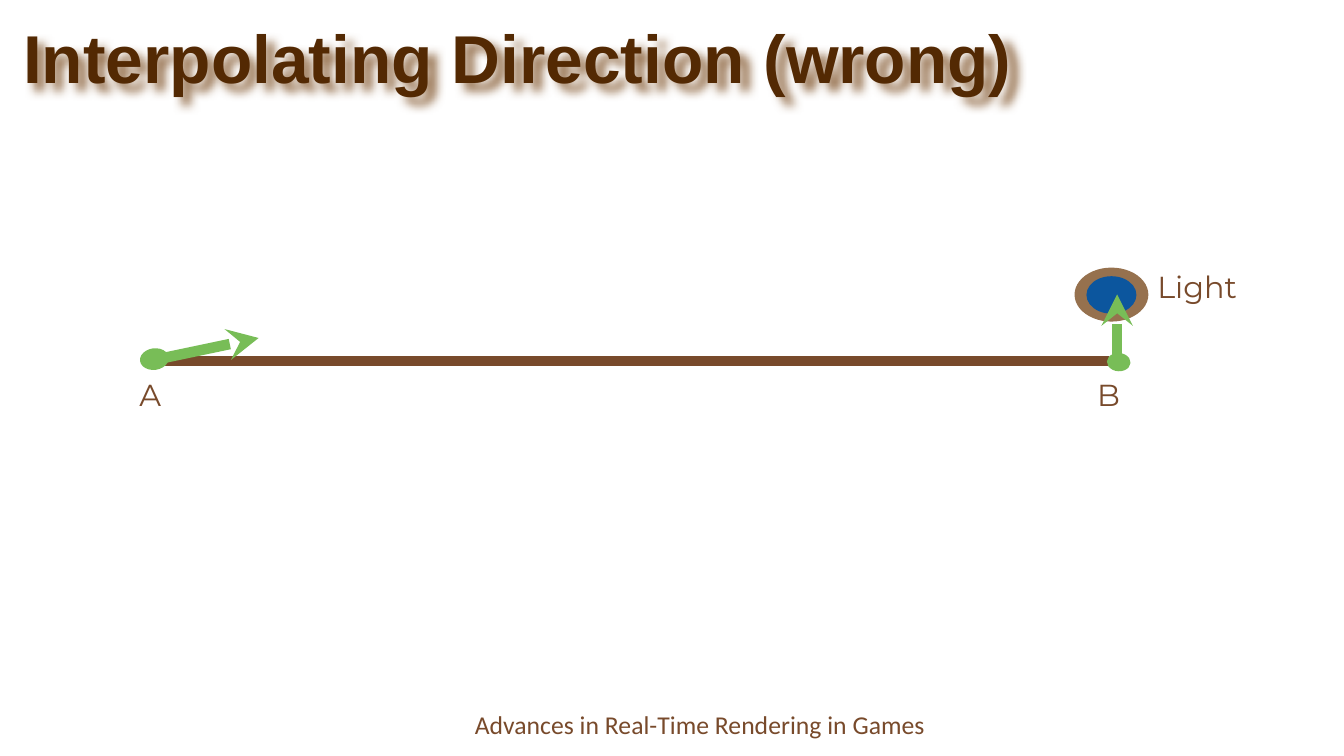
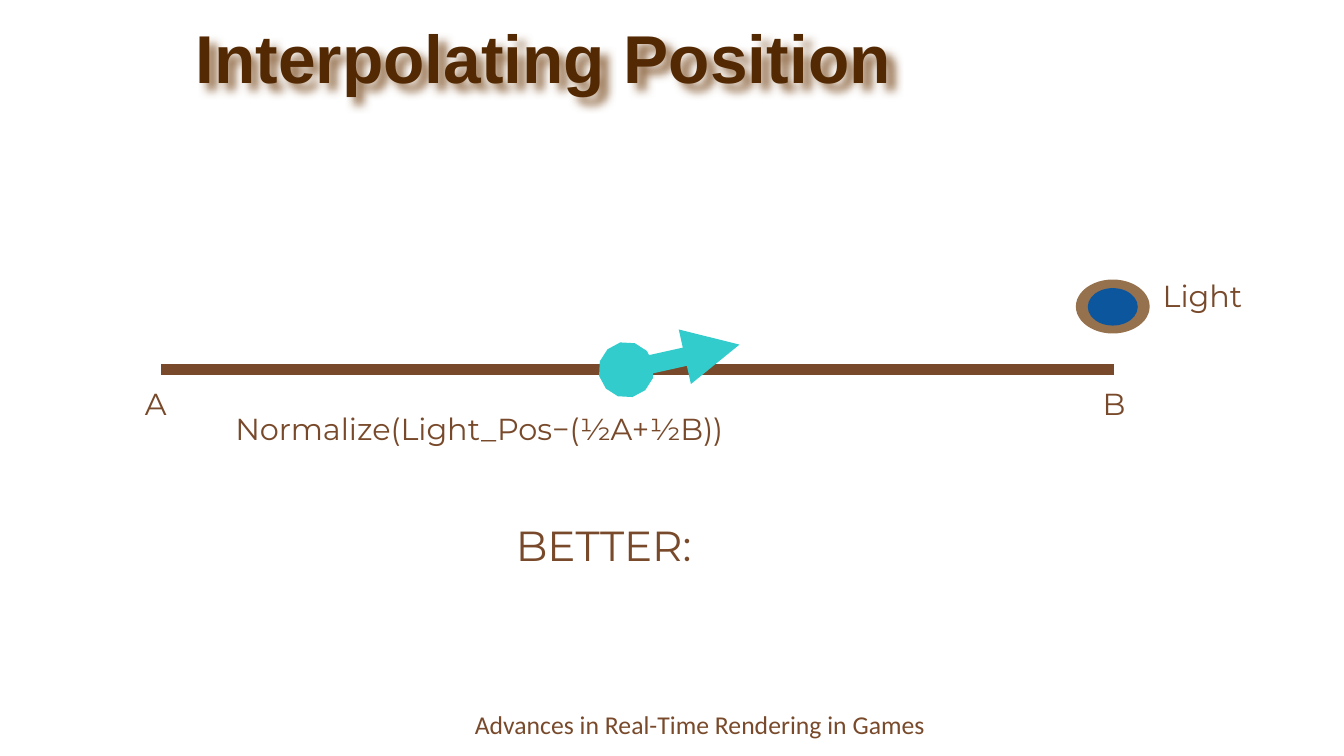
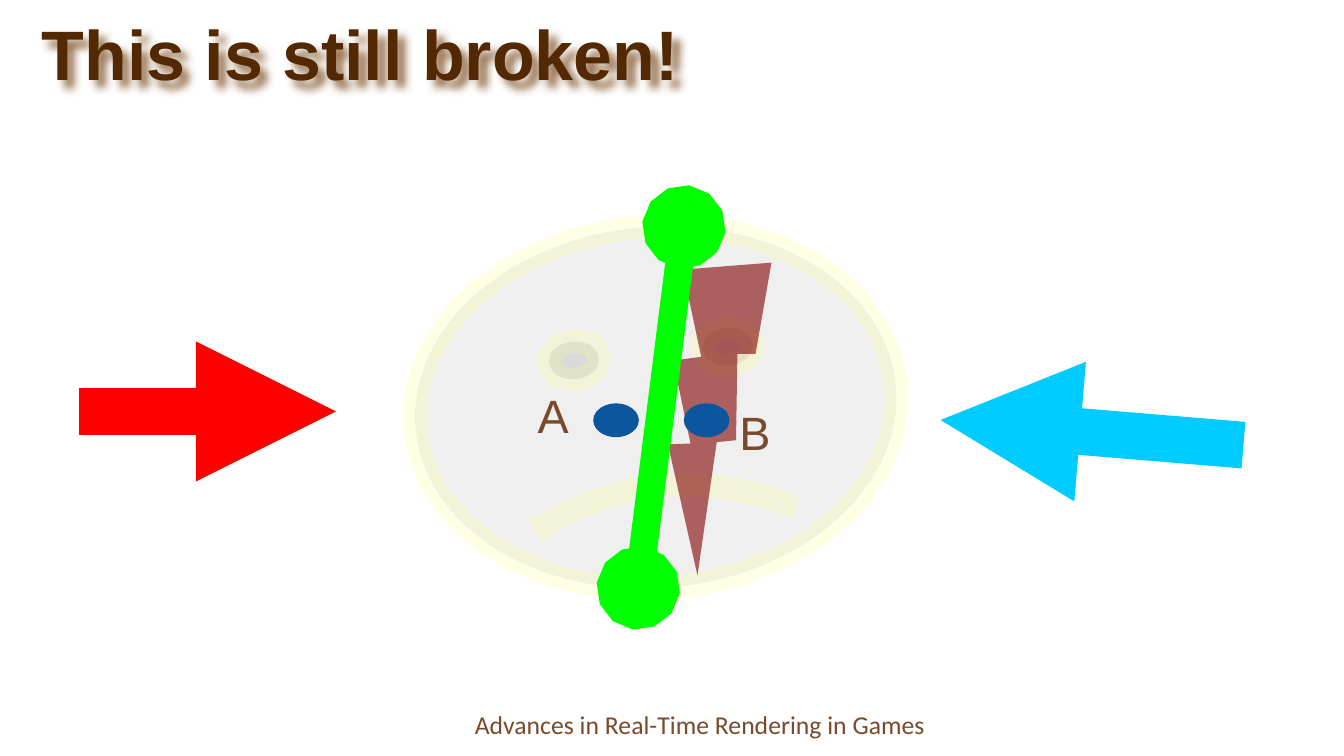
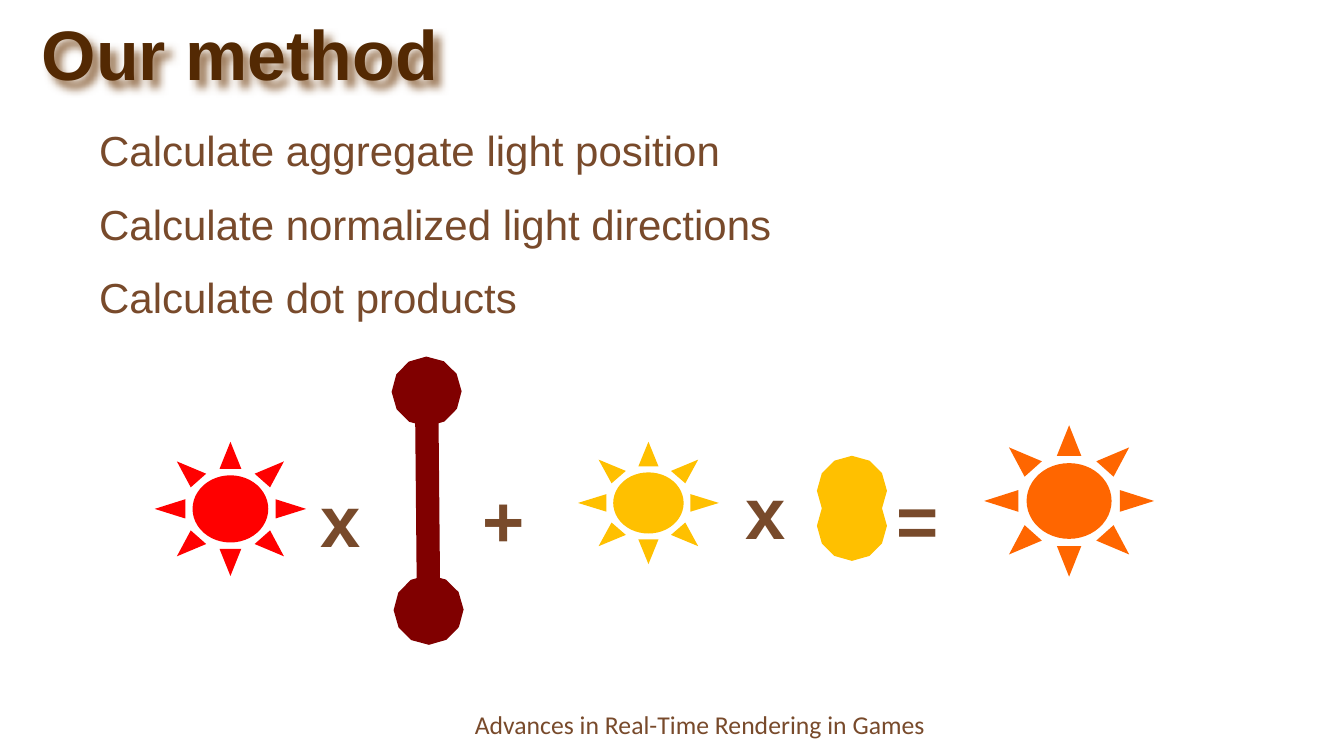
from dataclasses import dataclass
from typing import Optional

from lxml import etree
from pptx import Presentation
from pptx import util as u
from pptx.dml.color import RGBColor
from pptx.enum import shapes, text
from pptx.oxml import ns

COLORS = {
    "title": "532903", "brown": "784A2B", "shadow": "96714E",
    "direction": "78BD57", "rim": "96714E", "blue": "0C569E",
    "teal": "33CCCC", "gray": "C0C0C0", "pale": "FFFF99", "red": "FF0000",
    "cyan": "00CCFF", "maroon": "800000", "green": "00FF00",
    "amber": "FFC000", "orange": "FF6600",
}
FOOTER = "Advances in Real-Time Rendering in Games"
MSO = shapes.MSO_SHAPE
CENTER = text.PP_ALIGN.CENTER
LEFT = text.PP_ALIGN.LEFT
TIGHT = (0.18, 0.1)


@dataclass
class Box:
    left: float
    top: float
    width: float
    height: float

    def cm(self) -> tuple:
        return tuple(u.Cm(v) for v in (self.left, self.top, self.width, self.height))


@dataclass
class Figure:
    preset: shapes.MSO_SHAPE
    box: Box
    fill: str
    fill_alpha: int = 100
    line: Optional[str] = None
    line_width: float = 0.75
    line_alpha: int = 100
    rotation: float = 0
    adjust: Optional[float] = None


@dataclass
class Line:
    start: tuple
    end: tuple
    color: str
    width: float
    head: str = ""
    tail: str = ""


def rgb(name: str) -> RGBColor:
    return RGBColor.from_string(COLORS[name])


def set_alpha(fill, percent: int) -> None:
    if percent < 100:
        clr = fill._xPr.find(ns.qn("a:solidFill"))[0]
        etree.SubElement(clr, ns.qn("a:alpha"), val=str(percent * 1000))


def write(sp, content: str, *, size: float, font: str = "Arial", color: str = "brown",
          bold: bool = False, align=LEFT, anchor=text.MSO_ANCHOR.TOP, wrap: bool = True,
          inset: tuple = (0.25, 0.13), spacing: Optional[float] = None, gap: float = 0) -> None:
    tf = sp.text_frame
    tf.auto_size = text.MSO_AUTO_SIZE.NONE
    tf.word_wrap = wrap
    tf.vertical_anchor = anchor
    tf.margin_left = tf.margin_right = u.Cm(inset[0])
    tf.margin_top = tf.margin_bottom = u.Cm(inset[1])
    for i, line in enumerate(content.split("\n")):
        p = tf.add_paragraph() if i else tf.paragraphs[0]
        p.alignment = align
        p.line_spacing = spacing
        p.space_before = u.Pt(gap if i else 0)
        r = p.add_run()
        r.text = line
        r.font.size = u.Pt(size)
        r.font.name = font
        r.font.bold = bold
        r.font.color.rgb = rgb(color)


def add_text(s, content: str, box: Box, **fmt) -> None:
    write(s.shapes.add_textbox(*box.cm()), content, **fmt)


def add_figure(s, f: Figure) -> None:
    sp = s.shapes.add_shape(f.preset, *f.box.cm())
    sp.shadow.inherit = False
    sp.rotation = f.rotation
    if f.adjust is not None:
        sp.adjustments[0] = f.adjust
    sp.fill.solid()
    sp.fill.fore_color.rgb = rgb(f.fill)
    set_alpha(sp.fill, f.fill_alpha)
    if f.line:
        sp.line.color.rgb = rgb(f.line)
        sp.line.width = u.Pt(f.line_width)
        set_alpha(sp.line.fill, f.line_alpha)
    else:
        sp.line.fill.background()


def add_line(s, spec: Line) -> None:
    ends = [u.Cm(v) for v in spec.start + spec.end]
    sp = s.shapes.add_connector(shapes.MSO_CONNECTOR.STRAIGHT, *ends)
    sp.line.color.rgb = rgb(spec.color)
    sp.line.width = u.Pt(spec.width)
    ln = sp.line._get_or_add_ln()
    for tag, kind in (("a:headEnd", spec.head), ("a:tailEnd", spec.tail)):
        if kind:
            etree.SubElement(ln, ns.qn(tag), type=kind)
    etree.SubElement(sp._element.spPr, ns.qn("a:effectLst"))


def add_slide(prs, title: str, box: Box, size: float, align=LEFT):
    s = prs.slides.add_slide(prs.slide_layouts[5])
    add_text(s, FOOTER, Box(3.18, 10.59, 14.81, 0.74), size=11, font="Calibri", align=CENTER)
    sp = s.shapes.title
    sp.left, sp.top, sp.width, sp.height = box.cm()
    write(sp, title, size=size, color="title", bold=True, align=align,
          anchor=text.MSO_ANCHOR.MIDDLE, inset=(0.2, 0.1))
    effects = etree.SubElement(sp._element.spPr, ns.qn("a:effectLst"))
    shadow = etree.SubElement(effects, ns.qn("a:outerShdw"), blurRad="50800",
                              dist="50800", dir="2700000", algn="tl")
    etree.SubElement(shadow, ns.qn("a:srgbClr"), val=COLORS["shadow"])
    return s


def add_label(s, content: str, box: Box, size: float = 13, wrap: bool = False) -> None:
    add_text(s, content, box, size=size, font="Montserrat", wrap=wrap, inset=TIGHT)


def add_light(s, left: float, top: float, label: Box) -> None:
    for color, box in (("rim", Box(left, top, 1.09, 0.79)),
                       ("blue", Box(left + 0.18, top + 0.13, 0.73, 0.54))):
        add_figure(s, Figure(MSO.OVAL, box, color, line=color))
    add_label(s, "Light", label, wrap=True)


def add_segment(s, left: float, top: float) -> None:
    add_line(s, Line((left, top), (left + 14.4, top), "brown", 4.5))
    for name, x in (("A", left - 0.43), ("B", left + 14.05)):
        add_label(s, name, Box(x, top + 0.13, 0.74, 0.74))


def add_direction(s, dot: Box, rotation: float, start: tuple, end: tuple) -> None:
    add_figure(s, Figure(MSO.OVAL, dot, "direction", line="direction", rotation=rotation))
    add_line(s, Line(start, end, "direction", 4.5, tail="stealth"))


def interpolating_direction(prs) -> None:
    s = add_slide(prs, "Interpolating Direction (wrong)", Box(0, 0, 15.67, 1.7), 29, CENTER)
    add_segment(s, 2.36, 5.46)
    add_light(s, 16.26, 4.06, Box(17.32, 3.96, 2.34, 0.74))
    add_direction(s, Box(2.13, 5.28, 0.41, 0.3), 352.4, (2.34, 5.44), (3.91, 5.11))
    add_direction(s, Box(16.79, 5.31, 0.25, 0.33), 273.7, (16.89, 5.46), (16.89, 4.45))


def interpolating_position(prs) -> None:
    s = add_slide(prs, "Interpolating Position", Box(1.02, 0, 14.4, 1.7), 29, CENTER)
    add_segment(s, 2.44, 5.59)
    add_light(s, 16.28, 4.24, Box(17.4, 4.09, 2.59, 0.74))
    add_label(s, "Normalize(Light_Pos−(½A+½B))", Box(3.38, 6.1, 11.84, 0.74), wrap=True)
    add_label(s, "BETTER:", Box(7.62, 7.75, 3.43, 0.97), size=18)
    add_line(s, Line((9.47, 5.59), (11.18, 5.21), "teal", 8, "oval", "triangle"))


def still_broken(prs) -> None:
    s = add_slide(prs, "This is still broken!", Box(0.43, 0, 18.67, 1.6), 30)
    add_figure(s, Figure(MSO.SMILEY_FACE, Box(6.27, 3.43, 7.29, 5.46), "gray", 25,
                         "pale", 10, 25, 354.9, -0.05))
    add_line(s, Line((1.19, 6.22), (5.08, 6.22), "red", 20, tail="triangle"))
    add_line(s, Line((18.8, 6.73), (14.22, 6.35), "cyan", 20, tail="triangle"))
    add_figure(s, Figure(MSO.LIGHTNING_BOLT, Box(9.3, 3.76, 2.72, 4.57), "maroon", 60,
                         rotation=33.2))
    add_line(s, Line((10.34, 3.43), (9.65, 8.89), "green", 12, "oval", "oval"))
    for name, dot_left, label_left, label_top in (("A", 8.97, 7.95, 5.84),
                                                  ("B", 10.34, 11, 6.1)):
        add_figure(s, Figure(MSO.OVAL, Box(dot_left, 6.1, 0.69, 0.51), "blue"))
        add_text(s, name, Box(label_left, label_top, 1.52, 0.97), size=20,
                 inset=TIGHT, spacing=0.9)


def our_method(prs) -> None:
    s = add_slide(prs, "Our method", Box(0.43, 0, 18.67, 1.6), 30)
    steps = ("Calculate aggregate light position\n"
             "Calculate normalized light directions\n"
             "Calculate dot products")
    add_text(s, steps, Box(1.32, 1.78, 17.83, 3.25), size=18, inset=TIGHT, gap=10)
    for color, box in (("red", Box(2.34, 6.68, 2.29, 2.03)),
                       ("amber", Box(8.74, 6.68, 2.13, 1.85)),
                       ("orange", Box(14.88, 6.43, 2.57, 2.29))):
        add_figure(s, Figure(MSO.SUN, box, color, adjust=0.25))
    add_line(s, Line((6.45, 5.92), (6.48, 9.22), "maroon", 10, "oval", "oval"))
    add_line(s, Line((12.88, 7.42), (12.88, 7.95), "amber", 10, "oval", "oval"))
    for sign, left, top in (("x", 4.6, 7.06), ("+", 7.04, 7.06),
                            ("x", 11.02, 6.93), ("=", 13.31, 7.06)):
        add_text(s, sign, Box(left, top, 1.7, 1.57), size=31, bold=True)


def main() -> None:
    prs = Presentation()
    prs.slide_width, prs.slide_height = u.Cm(20.32), u.Cm(11.43)
    for build in (interpolating_direction, interpolating_position, still_broken, our_method):
        build(prs)
    prs.save("out.pptx")


if __name__ == "__main__":
    main()
